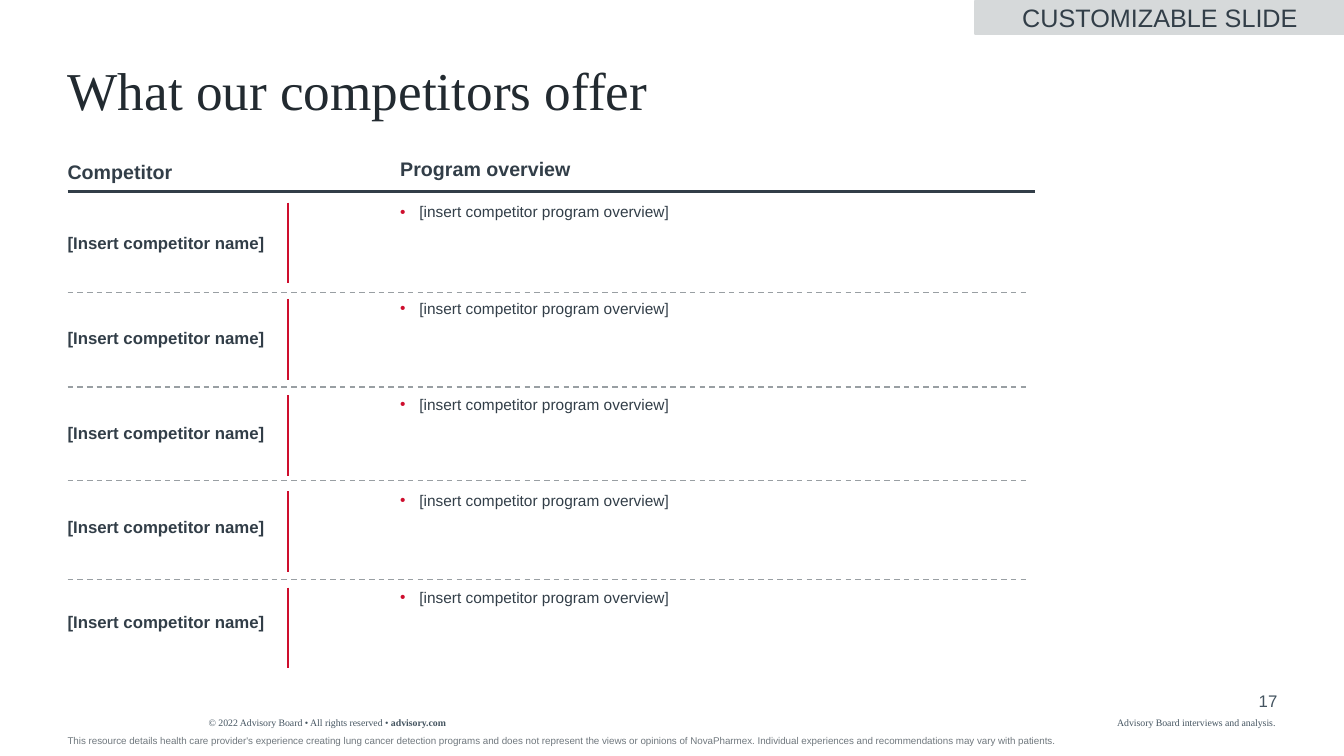
from lxml import etree
from pptx import Presentation
from pptx.dml.color import RGBColor
from pptx.enum import dml, shapes, text
from pptx.oxml import ns
from pptx.util import Inches, Pt

INK = RGBColor(0x32, 0x3E, 0x48)
DARK = RGBColor(0x22, 0x2A, 0x30)
SLATE = RGBColor(0x44, 0x54, 0x60)
NOTE = RGBColor(0x70, 0x78, 0x7E)
GREY = RGBColor(0x99, 0x9F, 0xA3)
PALE = RGBColor(0xD6, 0xD9, 0xDA)
RED = RGBColor(0xCE, 0x0E, 0x2D)
SANS, SERIF = "Arial", "Times New Roman"
LEFT, MID, BAR = 0.67, 3.97, 2.86
TOP = text.MSO_ANCHOR.TOP
ALIGN = text.PP_ALIGN


class Page:
    def __init__(self, deck):
        self.slide = deck.slides.add_slide(deck.slide_layouts[5])

    def fill(self, frame, runs, size, color, face=SANS, align=ALIGN.LEFT, anchor=TOP):
        """Fill a frame with one paragraph of (words, bold) runs."""
        frame.word_wrap = True
        frame.auto_size = text.MSO_AUTO_SIZE.NONE
        frame.vertical_anchor = anchor
        frame.margin_left = frame.margin_right = 0
        frame.margin_top = frame.margin_bottom = 0
        para = frame.paragraphs[0]
        para.alignment = align
        for words, bold in runs:
            run = para.add_run()
            run.text = words
            font = run.font
            font.name, font.size, font.bold = face, Pt(size), bold
            font.color.rgb = color
        return para

    def title(self, words):
        head = self.slide.shapes.title
        head.left, head.top = Inches(LEFT), Inches(0.64)
        head.width, head.height = Inches(12), Inches(0.59)
        para = self.fill(head.text_frame, [(words, False)], 38, DARK, SERIF)
        para.line_spacing = 0.9

    def label(self, x, y, w, h, runs, size, color=INK, **style):
        box = self.slide.shapes.add_textbox(Inches(x), Inches(y), Inches(w), Inches(h))
        return self.fill(box.text_frame, runs, size, color, **style)

    def bullet(self, x, y, w, words):
        para = self.label(x, y, w, 0.19, [(words, False)], 11)
        para.space_after = Pt(2)
        props = para._p.get_or_add_pPr()
        props.set("marL", str(Inches(0.19)))
        props.set("indent", str(-Inches(0.19)))
        tint = etree.SubElement(props, ns.qn("a:buClr"))
        etree.SubElement(tint, ns.qn("a:srgbClr"), val=str(RED))
        etree.SubElement(props, ns.qn("a:buFont"), typeface=SANS)
        etree.SubElement(props, ns.qn("a:buChar"), char="•")

    def line(self, x1, y1, x2, y2, color, width, dash=False):
        rule = self.slide.shapes.add_connector(
            shapes.MSO_CONNECTOR.STRAIGHT, Inches(x1), Inches(y1), Inches(x2), Inches(y2))
        rule.line.color.rgb = color
        rule.line.width = Pt(width)
        if dash:
            rule.line.dash_style = dml.MSO_LINE.DASH
        etree.SubElement(rule._element.spPr, ns.qn("a:effectLst"))

    def badge(self, x, y, w, h, words):
        tag = self.slide.shapes.add_shape(
            shapes.MSO_SHAPE.RECTANGLE, Inches(x), Inches(y), Inches(w), Inches(h))
        tag.shadow.inherit = False
        tag.fill.solid()
        tag.fill.fore_color.rgb = PALE
        tag.line.color.rgb = PALE
        tag.line.width = Pt(1.5)
        self.fill(tag.text_frame, [(words, False)], 18, INK,
                  align=ALIGN.CENTER, anchor=text.MSO_ANCHOR.MIDDLE)


def main():
    deck = Presentation()
    deck.slide_width, deck.slide_height = Inches(13.33), Inches(7.5)
    page = Page(deck)
    page.title("What our competitors offer")
    page.badge(9.67, 0.01, 3.67, 0.33, "CUSTOMIZABLE SLIDE")

    page.label(LEFT, 1.59, 2.4, 0.24, [("Competitor", True)], 14)
    page.label(MID, 1.56, 2.4, 0.24, [("Program overview", True)], 14)
    page.line(LEFT, 1.9, 10.27, 1.9, INK, 1.5)
    for y in (2.9, 3.84, 4.77, 5.75):
        page.line(LEFT, y, 10.21, y, GREY, 1, dash=True)

    rows = 5
    step = (5.83 - 2.01) / (rows - 1)
    for row in range(rows):
        y = 2.01 + row * step
        page.label(LEFT, 2.31 + row * 0.94, 1.99, 0.2, [("[Insert competitor name]", True)], 12)
        page.line(BAR, y, BAR, y + 0.8, RED, 1.5)
        page.bullet(MID, y, 3.6, "[insert competitor program overview]")

    page.label(2.07, 7.11, 3.26, 0.12,
               [("© 2022 Advisory Board • All rights reserved • ", False), ("advisory.com", True)],
               7, SLATE, face=SERIF)
    page.label(11.08, 7.11, 1.65, 0.12, [("Advisory Board interviews and analysis.", False)],
               7, SLATE, face=SERIF)
    page.label(12.17, 6.85, 0.5, 0.2, [("17", False)], 12, SLATE, align=ALIGN.RIGHT)
    note = ("This resource details health care provider's experience creating lung cancer "
            "detection programs and does not represent the views or opinions of NovaPharmex. "
            "Individual experiences and recommendations may vary with patients.")
    page.label(LEFT, 7.17, 11.55, 0.24, [(note, False)], 7, NOTE, anchor=text.MSO_ANCHOR.BOTTOM)
    deck.save("out.pptx")


if __name__ == "__main__":
    main()
